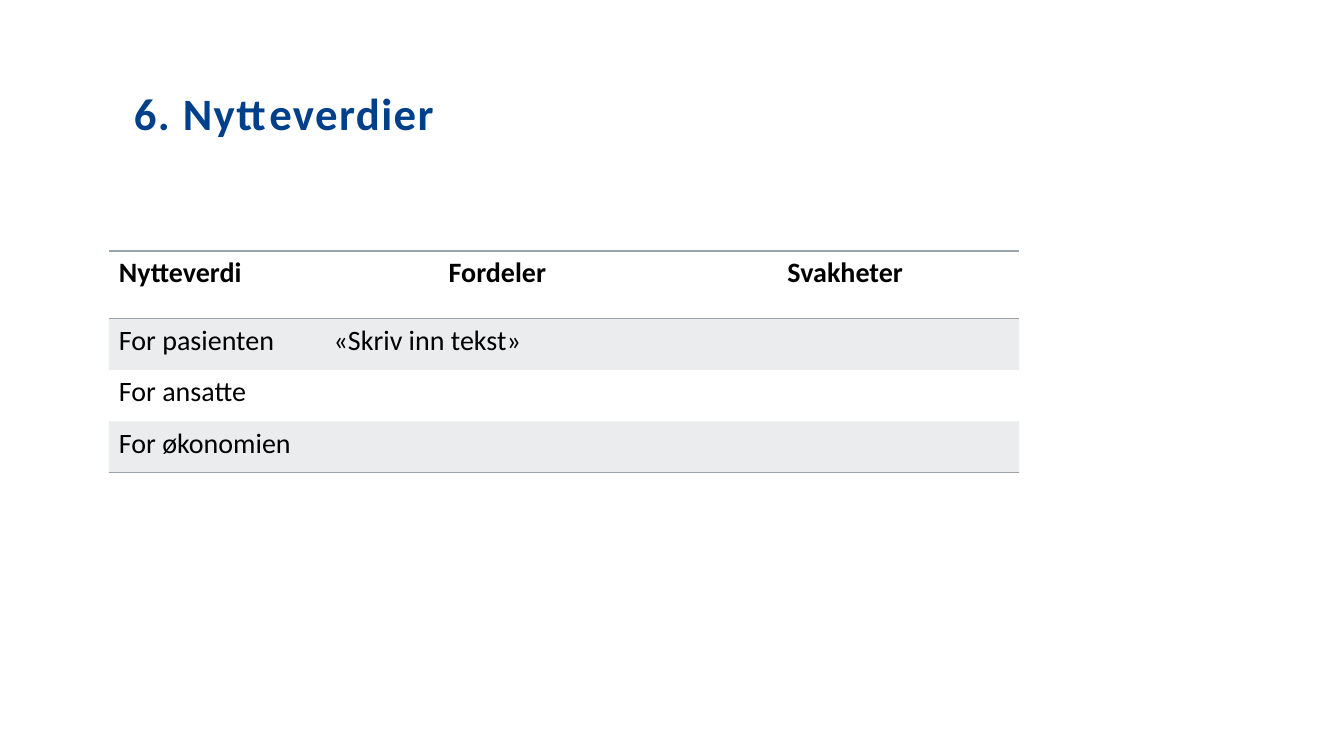
from dataclasses import dataclass

import pptx
import pptx.dml.color
import pptx.enum.text
import pptx.oxml
import pptx.oxml.ns
import pptx.util

Pt = pptx.util.Pt
ALIGN = pptx.enum.text.PP_ALIGN

FONT = "Calibri"
NAVY = "00408B"
BLACK = "000000"
GREY = "9AA2AB"
PLAIN_TABLE_STYLE = "{2D5ABB26-0587-4C30-8999-92F81FD0307C}"


@dataclass
class BenefitRow:
    texts: tuple[str, str, str]
    height: float
    header: bool = False
    shaded: bool = False
    borders: tuple[str, ...] = ()


BENEFITS = [
    BenefitRow(("Nytteverdi", "Fordeler", "Svakheter"), 48.24,
               header=True, borders=("lnT", "lnB")),
    BenefitRow(("For pasienten", "«Skriv inn tekst»", ""), 36.72, shaded=True),
    BenefitRow(("For ansatte", "", ""), 36.72),
    BenefitRow(("For økonomien", "", ""), 36.72, shaded=True, borders=("lnB",)),
]
COLUMN_WIDTHS = (153.36, 248.4, 248.4)


def rgb(color: str) -> pptx.dml.color.RGBColor:
    return pptx.dml.color.RGBColor.from_string(color)


def style_font(paragraph, size: float, color: str, bold: bool) -> None:
    font = paragraph.font
    font.name = FONT
    font.size = Pt(size)
    font.bold = bold
    font.color.rgb = rgb(color)


def shade(cell, color: str, opacity: int) -> None:
    cell.fill.solid()
    cell.fill.fore_color.rgb = rgb(color)
    tint = cell._tc.tcPr.find(".//" + pptx.oxml.ns.qn("a:srgbClr"))
    tint.append(pptx.oxml.parse_xml(
        f'<a:alpha {pptx.oxml.ns.nsdecls("a")} val="{opacity * 1000}"/>'))


def add_borders(cell, sides: tuple[str, ...], color: str) -> None:
    properties = cell._tc.get_or_add_tcPr()
    for position, side in enumerate(sides):
        properties.insert(position, pptx.oxml.parse_xml(
            f'<a:{side} {pptx.oxml.ns.nsdecls("a")} w="{Pt(1)}">'
            f'<a:solidFill><a:srgbClr val="{color}"/></a:solidFill></a:{side}>'))


def fill_cell(cell, benefit: BenefitRow, column: int) -> None:
    if benefit.shaded:
        shade(cell, GREY, 20)
    else:
        cell.fill.background()
    add_borders(cell, benefit.borders, GREY)
    paragraph = cell.text_frame.paragraphs[0]
    paragraph.text = benefit.texts[column]
    if benefit.header and column > 0:
        paragraph.alignment = ALIGN.CENTER
    if not benefit.header and column == 0:
        paragraph.space_after = Pt(6)
    style_font(paragraph, 20, BLACK, benefit.header)


def add_title(slide, text: str) -> None:
    title = slide.shapes.add_textbox(Pt(88.56), Pt(57.6), Pt(663.12), Pt(62.64))
    title.text_frame.word_wrap = True
    paragraph = title.text_frame.paragraphs[0]
    run = paragraph.add_run()
    run.text = text
    run._r.get_or_add_rPr().set("spc", "100")
    style_font(paragraph, 32, NAVY, True)


def add_benefit_table(slide) -> None:
    frame = slide.shapes.add_table(
        len(BENEFITS), len(COLUMN_WIDTHS), Pt(77.76), Pt(179.28),
        Pt(sum(COLUMN_WIDTHS)), Pt(sum(row.height for row in BENEFITS)))
    table = frame.table
    table.horz_banding = False
    table._tbl.tblPr.find(pptx.oxml.ns.qn("a:tableStyleId")).text = PLAIN_TABLE_STYLE
    for column, width in zip(table.columns, COLUMN_WIDTHS):
        column.width = Pt(width)
    for row, benefit in zip(table.rows, BENEFITS):
        row.height = Pt(benefit.height)
        for column, cell in enumerate(row.cells):
            fill_cell(cell, benefit, column)


def main() -> None:
    presentation = pptx.Presentation()
    presentation.slide_width = Pt(960)
    presentation.slide_height = Pt(540)
    slide = presentation.slides.add_slide(presentation.slide_layouts[6])

    # Heading
    add_title(slide, "6. Nytteverdier")

    # Benefits, with strengths and weaknesses
    add_benefit_table(slide)

    presentation.save("out.pptx")


if __name__ == "__main__":
    main()
